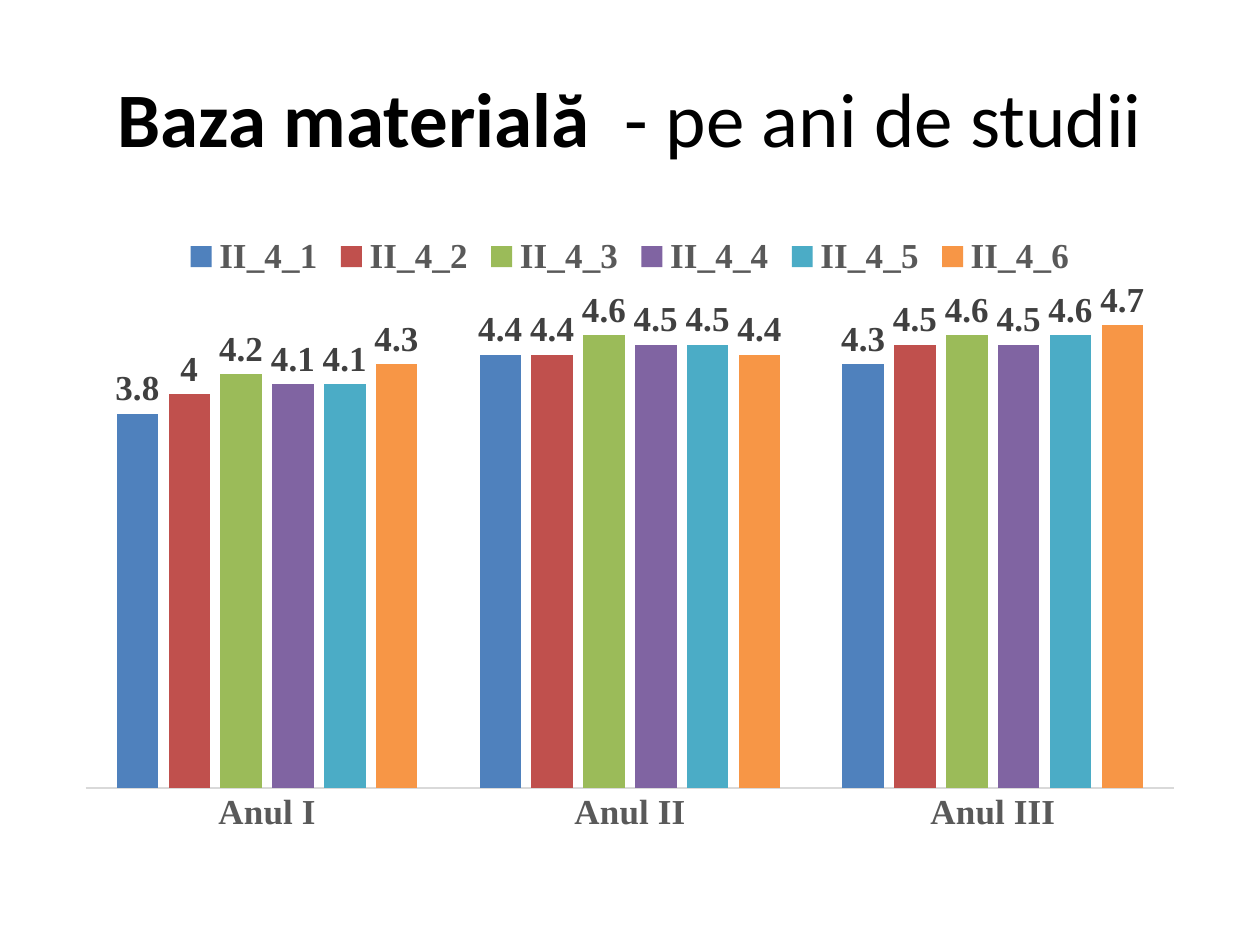
from lxml import etree
from pptx import Presentation
from pptx.chart.data import CategoryChartData
from pptx.dml.color import RGBColor
from pptx.enum.chart import XL_CHART_TYPE, XL_LABEL_POSITION, XL_LEGEND_POSITION, XL_TICK_MARK
from pptx.enum.text import MSO_ANCHOR, PP_ALIGN
from pptx.oxml.ns import qn
from pptx.util import Cm, Pt

COLUMNS = XL_CHART_TYPE.COLUMN_CLUSTERED
OUTSIDE = XL_LABEL_POSITION.OUTSIDE_END
TOP = XL_LEGEND_POSITION.TOP
NO_TICK = XL_TICK_MARK.NONE
MIDDLE = MSO_ANCHOR.MIDDLE
CENTER = PP_ALIGN.CENTER

BLACK = RGBColor(0x00, 0x00, 0x00)
LABEL_GRAY = RGBColor(0x40, 0x40, 0x40)
TEXT_GRAY = RGBColor(0x59, 0x59, 0x59)
LINE_GRAY = RGBColor(0xD9, 0xD9, 0xD9)
BLUE = RGBColor(0x4F, 0x81, 0xBD)
RED = RGBColor(0xC0, 0x50, 0x4D)
GREEN = RGBColor(0x9B, 0xBB, 0x59)
PURPLE = RGBColor(0x80, 0x64, 0xA2)
TEAL = RGBColor(0x4B, 0xAC, 0xC6)
ORANGE = RGBColor(0xF7, 0x96, 0x46)

TITLE_FORMAT = {"name": "Calibri", "size": Pt(44)}
CHART_FORMAT = {"name": "Times New Roman", "size": Pt(20), "bold": True}
YEARS = ["Anul I", "Anul II", "Anul III"]
SERIES = [
    ("II_4_1", (3.8, 4.4, 4.3), BLUE),
    ("II_4_2", (4, 4.4, 4.5), RED),
    ("II_4_3", (4.2, 4.6, 4.6), GREEN),
    ("II_4_4", (4.1, 4.5, 4.5), PURPLE),
    ("II_4_5", (4.1, 4.5, 4.6), TEAL),
    ("II_4_6", (4.3, 4.4, 4.7), ORANGE),
]
PLOT_LAYOUT = {
    "layoutTarget": "inner", "xMode": "edge", "yMode": "edge",
    "x": 0.02, "y": 0.12, "w": 0.96, "h": 0.79,
}


def format_font(font, values, color):
    for name, value in values.items():
        setattr(font, name, value)
    font.color.rgb = color


deck = Presentation()
deck.slide_width, deck.slide_height = Cm(25.4), Cm(19.05)
page = deck.slides.add_slide(deck.slide_layouts[5])

title = page.shapes.title
title.left, title.top, title.width, title.height = Cm(1.27), Cm(0.76), Cm(22.86), Cm(3.18)
title.text_frame.vertical_anchor = MIDDLE
para = title.text_frame.paragraphs[0]
para.alignment = CENTER
for text, bold in [("Baza materială ", True), (" - pe ani de studii", False)]:
    span = para.add_run()
    span.text = text
    format_font(span.font, {**TITLE_FORMAT, "bold": bold}, BLACK)

data = CategoryChartData()
data.categories = YEARS
for name, values, color in SERIES:
    data.add_series(name, values)
chart = page.shapes.add_chart(
    COLUMNS, Cm(1.27), Cm(4.45), Cm(22.86), Cm(12.57), data).chart
format_font(chart.font, CHART_FORMAT, BLACK)
chart.has_title = False

chart.has_legend = True
chart.legend.position = TOP
chart.legend.include_in_layout = False
format_font(chart.legend.font, CHART_FORMAT, TEXT_GRAY)

year_axis = chart.category_axis
year_axis.major_tick_mark = year_axis.minor_tick_mark = NO_TICK
year_axis.format.line.color.rgb = LINE_GRAY
year_axis.format.line.width = Pt(0.75)
format_font(year_axis.tick_labels.font, CHART_FORMAT, TEXT_GRAY)

score_axis = chart.value_axis
score_axis.visible = False
score_axis.has_major_gridlines = False
score_axis.minimum_scale, score_axis.maximum_scale = 0, 5

plot = chart.plots[0]
plot.gap_width, plot.overlap = 150, -25
plot.vary_by_categories = False
for series, (name, values, color) in zip(plot.series, SERIES):
    series.format.fill.solid()
    series.format.fill.fore_color.rgb = color
    labels = series.data_labels
    labels.show_value = True
    labels.position = OUTSIDE
    format_font(labels.font, CHART_FORMAT, LABEL_GRAY)

plot_area = chart.element.find(".//" + qn("c:plotArea"))
for layout in plot_area.findall(qn("c:layout")):
    plot_area.remove(layout)
layout = etree.Element(qn("c:layout"))
manual = etree.SubElement(layout, qn("c:manualLayout"))
for name, value in PLOT_LAYOUT.items():
    etree.SubElement(manual, qn("c:" + name)).set("val", str(value))
plot_area.insert(0, layout)

deck.save("out.pptx")
